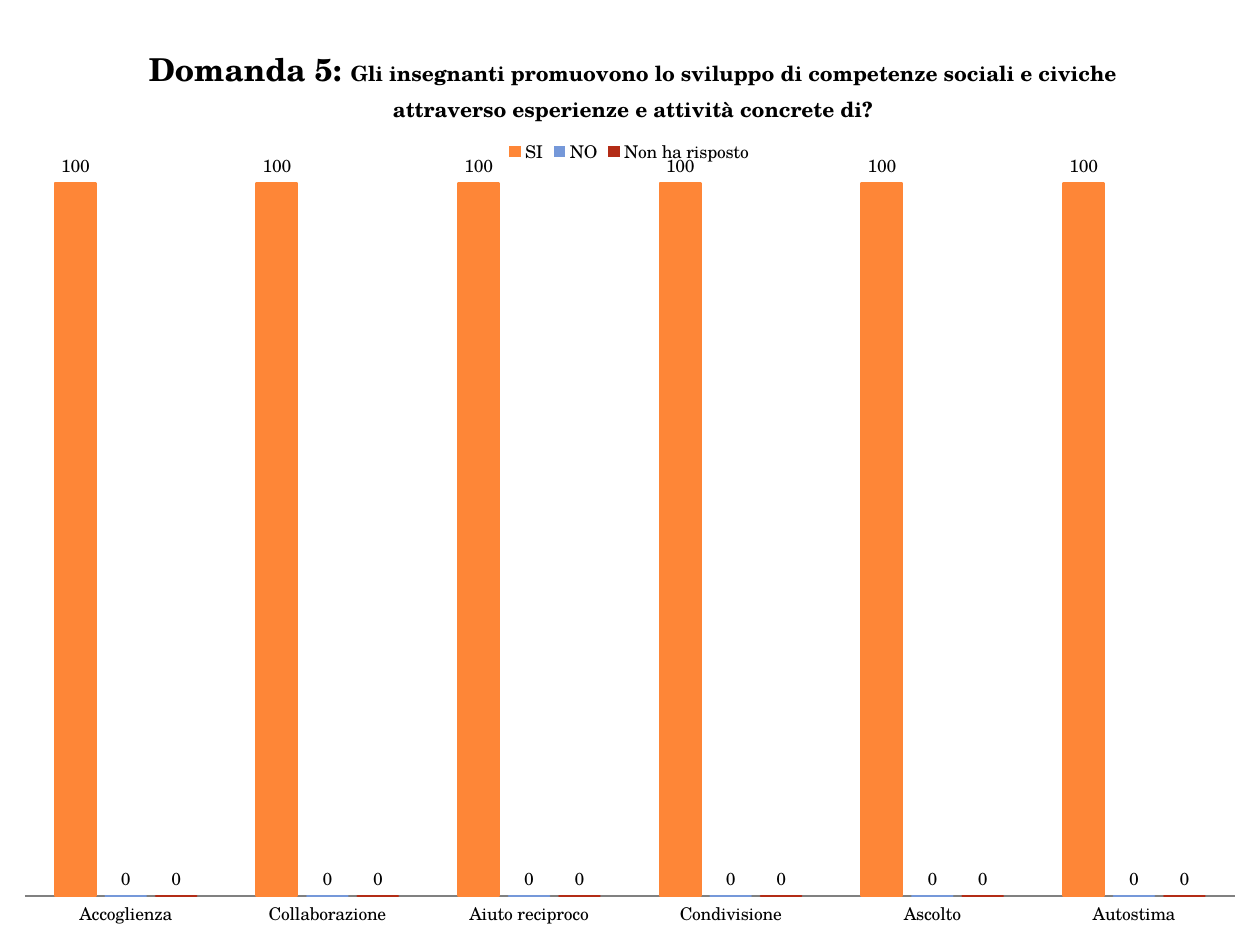
import pptx
import pptx.chart.data
import pptx.dml.color
import pptx.enum.chart
import pptx.oxml
import pptx.oxml.ns
import pptx.util

RGBColor = pptx.dml.color.RGBColor
BLACK = RGBColor(0x00, 0x00, 0x00)
GRAY = RGBColor(0x80, 0x80, 0x80)
ORANGE = RGBColor(0xFE, 0x86, 0x37)
BLUE = RGBColor(0x75, 0x98, 0xD9)
RED = RGBColor(0xB3, 0x2C, 0x16)

WIDTH, HEIGHT = 1260, 945
EMU_PER_PX = 914400 / 126


def px(n):
    return pptx.util.Emu(round(n * EMU_PER_PX))


class SlideBuilder:
    """Holds the text style and the current slide, and adds elements to it."""

    def __init__(self, slide, font="TeX Gyre Schola", size=10):
        self.slide = slide
        self.font = font
        self.size = size

    def style(self, font, size, bold=False):
        font.name = self.font
        font.size = pptx.util.Pt(size)
        font.bold = bold
        font.color.rgb = BLACK

    def place(self, element, index, x, y, w=None, h=None):
        ns = pptx.oxml.ns
        for old in element.findall(ns.qn("c:layout")):
            element.remove(old)
        parts = []
        if w:
            parts.append('<c:layoutTarget val="inner"/>')
        parts.append('<c:xMode val="edge"/><c:yMode val="edge"/>')
        for tag, value, total in (("x", x, WIDTH), ("y", y, HEIGHT),
                                  ("w", w, WIDTH), ("h", h, HEIGHT)):
            if value:
                parts.append(f'<c:{tag} val="{value / total:.4f}"/>')
        element.insert(index, pptx.oxml.parse_xml(
            f'<c:layout {ns.nsdecls("c")}><c:manualLayout>'
            f'{"".join(parts)}</c:manualLayout></c:layout>'))

    def column_chart(self, x, y, w, h, categories, series):
        data = pptx.chart.data.CategoryChartData(number_format="0")
        data.categories = categories
        for name, value, _ in series:
            data.add_series(name, [value] * len(categories))
        enum = pptx.enum.chart
        chart = self.slide.shapes.add_chart(
            enum.XL_CHART_TYPE.COLUMN_CLUSTERED,
            px(x), px(y), px(w), px(h), data).chart
        self.style(chart.font, self.size)

        plot = chart.plots[0]
        plot.vary_by_categories = False
        plot.gap_width = 150
        plot.overlap = -25
        for ser, (_, _, color) in zip(plot.series, series):
            ser.format.fill.solid()
            ser.format.fill.fore_color.rgb = color
            ser.format.line.color.rgb = color
            ser.format.line.width = pptx.util.Pt(1.5)
            labels = ser.data_labels
            labels.show_value = True
            labels.number_format = "0"
            labels.number_format_is_linked = False
            labels.position = enum.XL_LABEL_POSITION.OUTSIDE_END
            self.style(labels.font, self.size)

        cat = chart.category_axis
        cat.major_tick_mark = enum.XL_TICK_MARK.NONE
        cat.format.line.color.rgb = GRAY
        self.style(cat.tick_labels.font, self.size)
        val = chart.value_axis
        val.visible = False
        val.has_major_gridlines = False
        val.minimum_scale = 0
        val.maximum_scale = 100
        self.place(chart.element.chart.plotArea, 0, 25, 183, 1210, 713)
        return chart

    def chart_title(self, chart, x, y, runs):
        chart.has_title = True
        p = chart.chart_title.text_frame.paragraphs[0]
        for text, size in runs:
            r = p.add_run()
            r.text = text
            self.style(r.font, size, bold=True)
        self.place(chart.chart_title.element, 1, x, y)

    def chart_legend(self, chart, x, y):
        chart.has_legend = True
        legend = chart.legend
        legend.position = pptx.enum.chart.XL_LEGEND_POSITION.TOP
        legend.include_in_layout = False
        self.style(legend.font, self.size)
        self.place(legend.element if hasattr(legend, "element")
                   else chart.element.chart.find(pptx.oxml.ns.qn("c:legend")),
                   1, x, y)


def main():
    prs = pptx.Presentation()
    prs.slide_width, prs.slide_height = px(WIDTH), px(HEIGHT)
    s = SlideBuilder(prs.slides.add_slide(prs.slide_layouts[6]))
    chart = s.column_chart(
        0, 0, WIDTH, HEIGHT,
        ["Accoglienza", "Collaborazione", "Aiuto reciproco",
         "Condivisione", "Ascolto", "Autostima"],
        [("SI", 100, ORANGE), ("NO", 0, BLUE), ("Non ha risposto", 0, RED)])
    s.chart_title(chart, 145, 38, [
        ("Domanda 5: ", 18),
        ("Gli insegnanti promuovono lo sviluppo di competenze sociali e "
         "civiche attraverso esperienze e attività concrete di?", 12)])
    s.chart_legend(chart, 504, 134)
    prs.save("out.pptx")


if __name__ == "__main__":
    main()
